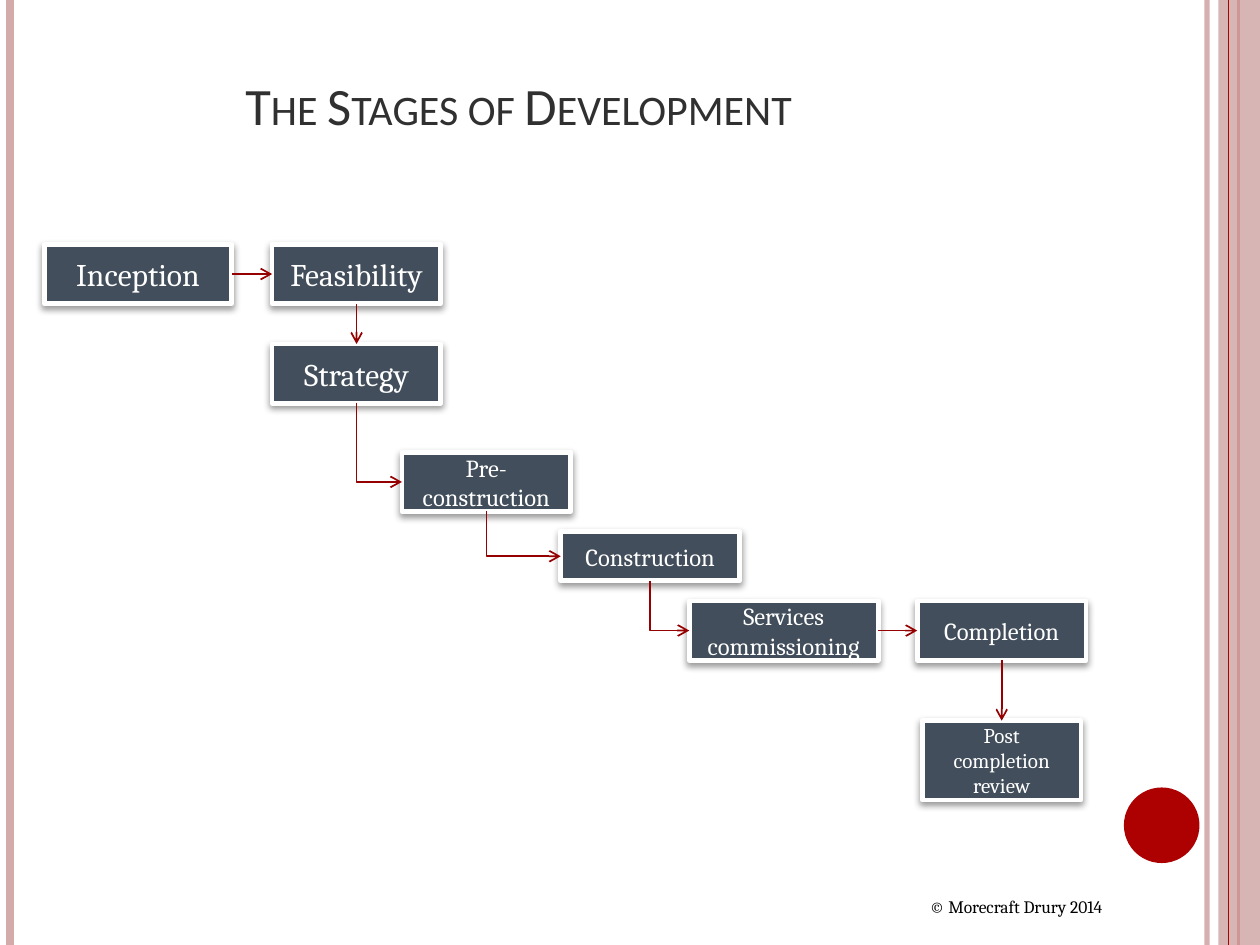
from lxml import etree
from pptx import Presentation
from pptx.dml.color import RGBColor
from pptx.enum.shapes import MSO_CONNECTOR, MSO_SHAPE
from pptx.enum.text import MSO_ANCHOR, PP_ALIGN
from pptx.oxml.ns import qn
from pptx.util import Inches, Pt

RECTANGLE, OVAL = MSO_SHAPE.RECTANGLE, MSO_SHAPE.OVAL
STRAIGHT, ELBOW = MSO_CONNECTOR.STRAIGHT, MSO_CONNECTOR.ELBOW
MIDDLE, BOTTOM, TOP = MSO_ANCHOR.MIDDLE, MSO_ANCHOR.BOTTOM, MSO_ANCHOR.TOP
CENTER, LEFT = PP_ALIGN.CENTER, PP_ALIGN.LEFT
SIDE_TOP, SIDE_LEFT, SIDE_BOTTOM, SIDE_RIGHT = range(4)

RED, PINK, ARROW_RED = "AD0101", "D3ABAB", "950000"
SLATE, WHITE, CHARCOAL, BLACK = "424E5B", "FFFFFF", "303030", "000000"

STAGES = {
    "Inception": (0.35, 1.94, 1.49, 0.47, 18),
    "Feasibility": (2.16, 1.94, 1.34, 0.47, 18),
    "Strategy": (2.16, 2.73, 1.34, 0.47, 18),
    "Pre-construction": (3.19, 3.59, 1.34, 0.47, 14),
    "Construction": (4.45, 4.22, 1.42, 0.39, 14),
    "Services commissioning": (5.47, 4.77, 1.5, 0.47, 14),
    "Completion": (7.28, 4.77, 1.34, 0.47, 14),
    "Post completion review": (7.32, 5.72, 1.26, 0.63, 12),
}
STEPS = ["across", "down", "bend", "bend", "bend", "across", "down"]


def rgb(value):
    """Turn a hex string into a colour."""
    return RGBColor.from_string(value)


def add_child(parent, tag, **attributes):
    """Append a drawing element with its attributes."""
    child = etree.SubElement(parent, qn(tag))
    for name, value in attributes.items():
        child.set(name, str(value))
    return child


def set_alpha(color_element, percent):
    """Make a colour partly transparent."""
    add_child(color_element, "a:alpha", val=percent * 1000)


def write_text(shape, text, size, color, font="Cambria", align=LEFT, anchor=TOP, small_caps=False):
    """Write one formatted paragraph into a shape."""
    frame = shape.text_frame
    frame.word_wrap = True
    frame.vertical_anchor = anchor
    paragraph = frame.paragraphs[0]
    paragraph.alignment = align
    run = paragraph.add_run()
    run.text = text
    run.font.size = Pt(size)
    run.font.name = font
    run.font.color.rgb = rgb(color)
    if small_caps:
        run.font._element.set("cap", "small")


def add_label(slide, box, text, **text_format):
    """Place a text box."""
    label = slide.shapes.add_textbox(*map(Inches, box))
    write_text(label, text, **text_format)


def add_solid(slide, kind, box, color):
    """Place a plain filled shape without outline."""
    solid = slide.shapes.add_shape(kind, *map(Inches, box))
    solid.shadow.inherit = False
    solid.fill.solid()
    solid.fill.fore_color.rgb = rgb(color)
    solid.line.fill.background()
    return solid


def add_line(slide, kind, start, end, color, width):
    """Draw a connector without shadow."""
    line = slide.shapes.add_connector(kind, *map(Inches, start + end))
    line.line.color.rgb = rgb(color)
    line.line.width = Pt(width)
    add_child(line._element.spPr, "a:effectLst")
    return line


def add_side_stripes(slide, box):
    """Draw the vertical stripes and the disc along the slide edges."""
    left, top, width, height = box
    right, bottom = left + width, top + height

    def stripe(x, color, weight):
        return add_line(slide, STRAIGHT, (x, top), (x, bottom), color, weight)

    inner = stripe(right - 0.42, PINK, 3)
    set_alpha(inner.line._ln.find(".//" + qn("a:srgbClr")), 93)
    stripe(left + 0.08, PINK, 4.5)
    stripe(right - 0.17, RED, 1.5)
    band = add_solid(slide, RECTANGLE, (right - 0.33, top, 0.33, height), PINK)
    set_alpha(band._element.spPr.find(qn("a:solidFill"))[0], 87)
    stripe(right - 0.25, RED, 0.75)
    add_solid(slide, OVAL, (right - 1.08, bottom - 1.25, 0.6, 0.6), RED)


def add_stage(slide, box, text, size):
    """Place one stage box with white frame and soft shadow."""
    stage = add_solid(slide, RECTANGLE, box, SLATE)
    stage.line.color.rgb = rgb(WHITE)
    stage.line.width = Pt(2.75)
    effects = stage._element.spPr.find(qn("a:effectLst"))
    shadow = add_child(effects, "a:outerShdw", blurRad=Pt(4), dist=Pt(2),
                       dir=90 * 60000, rotWithShape=0)
    set_alpha(add_child(shadow, "a:srgbClr", val=BLACK), 40)
    write_text(stage, text, size, WHITE, align=CENTER, anchor=MIDDLE)
    return stage


def bend_down_then_right(arrow):
    """Give an elbow connector a single corner below its start."""
    left, top, run, drop = arrow.left, arrow.top, arrow.width, arrow.height
    arrow.left, arrow.top = left + (run - drop) // 2, top + (drop - run) // 2
    arrow.width, arrow.height = drop, run
    properties = arrow._element.spPr
    properties.find(qn("a:prstGeom")).set("prst", "bentConnector2")
    transform = properties.find(qn("a:xfrm"))
    transform.set("rot", str(270 * 60000))
    transform.set("flipH", "1")


def add_step(slide, source, target, step):
    """Join two stages with an arrow."""
    kind = ELBOW if step == "bend" else STRAIGHT
    arrow = add_line(slide, kind, (0, 0), (1, 1), ARROW_RED, 1)
    add_child(arrow.line._ln, "a:tailEnd", type="arrow")
    arrow.begin_connect(source, SIDE_RIGHT if step == "across" else SIDE_BOTTOM)
    arrow.end_connect(target, SIDE_TOP if step == "down" else SIDE_LEFT)
    if step == "bend":
        bend_down_then_right(arrow)


def add_stage_flow(slide, origin):
    """Place all stages from the origin and join each to the next."""
    x, y = origin
    stages = [add_stage(slide, (x + left, y + top, width, height), text, size)
              for text, (left, top, width, height, size) in STAGES.items()]
    for source, target, step in zip(stages, stages[1:], STEPS):
        add_step(slide, source, target, step)


def main():
    """Build the slide and save it."""
    deck = Presentation()
    deck.slide_width, deck.slide_height = Inches(10), Inches(7.5)
    slide = deck.slides.add_slide(deck.slide_layouts[6])
    add_side_stripes(slide, (0, 0, 10, 7.5))
    add_label(slide, (1.85, 0.44, 7.76, 0.69), "The Stages of Development", size=30,
              color=CHARCOAL, font="Calibri", anchor=BOTTOM, small_caps=True)
    add_stage_flow(slide, (0, 0))
    add_label(slide, (7.28, 7.06, 2.13, 0.27), "© Morecraft Drury 2014", size=10, color=BLACK)
    deck.save("out.pptx")


if __name__ == "__main__":
    main()
